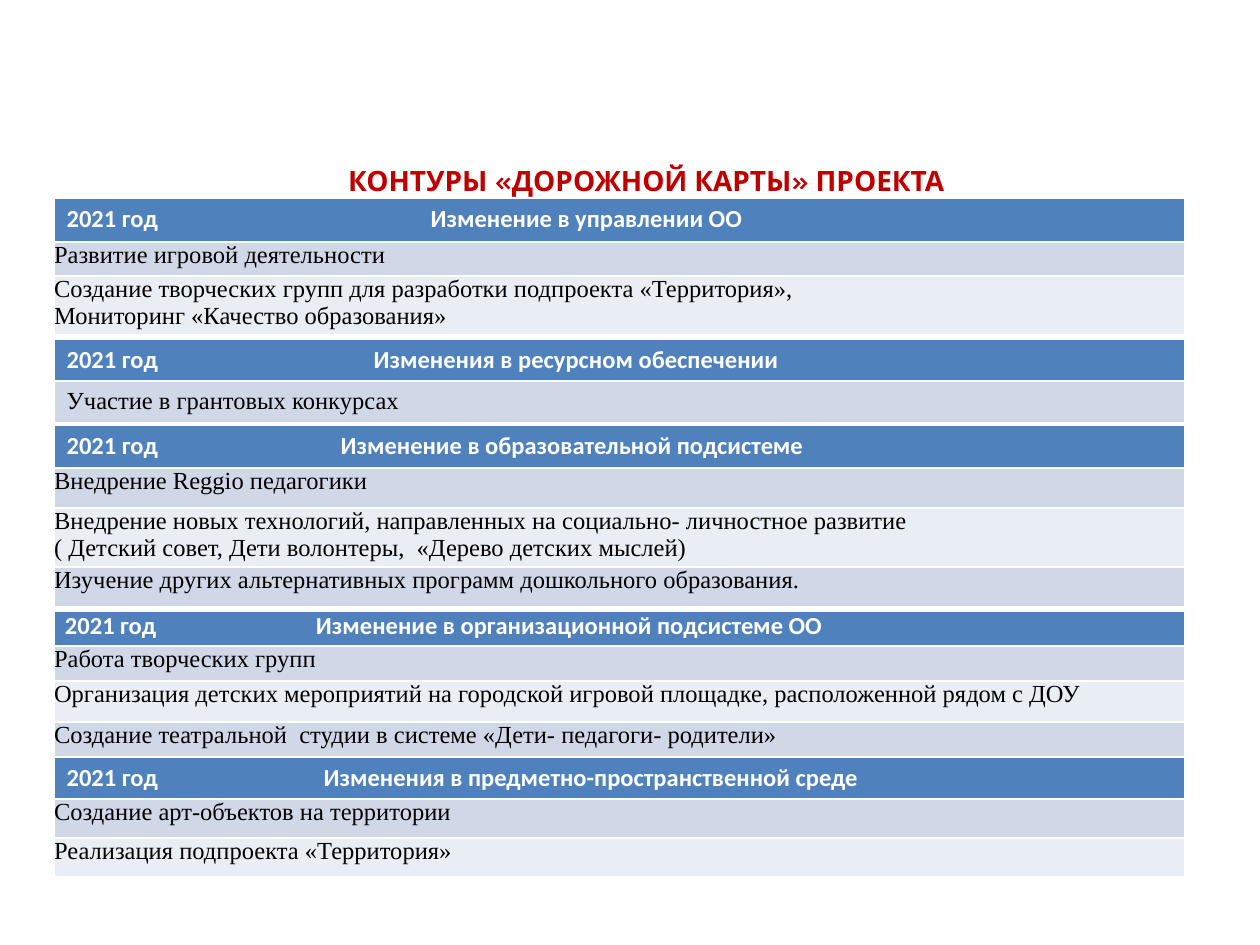
from dataclasses import dataclass

from lxml.etree import SubElement
from pptx import Presentation
from pptx.dml.color import RGBColor
from pptx.enum.text import MSO_AUTO_SIZE, PP_ALIGN
from pptx.oxml.ns import qn
from pptx.util import Pt

SCALE = 914400 / 126
LEFT, WIDTH = 54, 1131
INSET = 13
YEAR = "2021 год"

RED = RGBColor(0xC0, 0x00, 0x00)
BLUE = RGBColor(0x4F, 0x81, 0xBD)
DARK = RGBColor(0xD0, 0xD8, 0xE8)
LIGHT = RGBColor(0xE9, 0xED, 0xF4)
WHITE = RGBColor(0xFF, 0xFF, 0xFF)
BLACK = RGBColor(0x00, 0x00, 0x00)


@dataclass
class Row:
    text: str
    height: int
    inset: bool = False


@dataclass
class Block:
    top: int
    title: str
    tab: int
    height: int
    rows: list[Row]
    tight: bool = False


BLOCKS = [
    Block(198, "Изменение в управлении ОО", 364, 44, [
        Row("Развитие игровой деятельности", 34),
        Row("Создание творческих групп для разработки подпроекта «Территория»,\n"
            "Мониторинг «Качество образования»", 58),
    ]),
    Block(339, "Изменения в ресурсном обеспечении", 307, 42, [
        Row("Участие в грантовых конкурсах", 42, inset=True),
    ]),
    Block(425, "Изменение в образовательной подсистеме", 274, 43, [
        Row("Внедрение Reggio педагогики", 40),
        Row("Внедрение новых технологий, направленных на социально- личностное развитие\n"
            "( Детский совет, Дети волонтеры,  «Дерево детских мыслей)", 59),
        Row("Изучение других альтернативных программ дошкольного образования.", 40),
    ]),
    Block(611, "Изменение в организационной подсистеме ОО", 251, 35, [
        Row("Работа творческих групп", 35),
        Row("Организация детских мероприятий на городской игровой площадке, "
            "расположенной рядом с ДОУ", 41),
        Row("Создание театральной  студии в системе «Дети- педагоги- родители»", 35),
    ], tight=True),
    Block(757, "Изменения в предметно-пространственной среде", 257, 42, [
        Row("Создание арт-объектов на территории", 39),
        Row("Реализация подпроекта «Территория»", 39),
    ]),
]


def px(num: int) -> int:
    return round(num * SCALE)


def style(par, face: str, size: int, color: RGBColor, bold: bool) -> None:
    font = par.font
    font.name, font.size, font.bold = face, Pt(size), bold
    font.color.rgb = color


def paint(cell, color: RGBColor) -> None:
    cell.fill.solid()
    cell.fill.fore_color.rgb = color


def trim(cell, left: int = 0) -> None:
    """Remove the cell's insets, apart from the left one if given."""
    cell.margin_top = cell.margin_right = cell.margin_bottom = 0
    cell.margin_left = px(left)


def add_tab(par, pos: int) -> None:
    tabs = SubElement(par._p.get_or_add_pPr(), qn("a:tabLst"))
    SubElement(tabs, qn("a:tab"), pos=str(px(pos)), algn="l")


def draw_head(cell, block: Block) -> None:
    paint(cell, BLUE)
    if block.tight:
        trim(cell, INSET - 2)
    par = cell.text_frame.paragraphs[0]
    par.add_run().text = f"{YEAR}\t{block.title}"
    add_tab(par, block.tab)
    style(par, "Calibri", 14, WHITE, True)


def draw_row(cell, row: Row, color: RGBColor) -> None:
    paint(cell, color)
    if not row.inset:
        trim(cell)
    cell.text = row.text
    for par in cell.text_frame.paragraphs:
        style(par, "Times New Roman", 14, BLACK, False)


def draw_block(slide, block: Block) -> None:
    sizes = [block.height] + [row.height for row in block.rows]
    table = slide.shapes.add_table(
        len(sizes), 1, px(LEFT), px(block.top), px(WIDTH), px(sum(sizes))).table
    for line, size in zip(table.rows, sizes):
        line.height = px(size)
    draw_head(table.cell(0, 0), block)
    for num, row in enumerate(block.rows):
        draw_row(table.cell(num + 1, 0), row, LIGHT if num % 2 else DARK)


def draw_title(slide) -> None:
    box = slide.shapes.add_textbox(px(130), px(161), px(1033), px(43))
    frame = box.text_frame
    frame.word_wrap = True
    frame.auto_size = MSO_AUTO_SIZE.SHAPE_TO_FIT_TEXT
    par = frame.paragraphs[0]
    par.text = "КОНТУРЫ «ДОРОЖНОЙ КАРТЫ» ПРОЕКТА"
    par.alignment = PP_ALIGN.CENTER
    par.line_spacing = 0.9
    style(par, "Karla", 16, RED, True)


def main() -> None:
    deck = Presentation()
    deck.slide_width, deck.slide_height = px(1260), px(945)
    slide = deck.slides.add_slide(deck.slide_layouts[6])
    draw_title(slide)
    for block in BLOCKS:
        draw_block(slide, block)
    deck.save("out.pptx")


if __name__ == "__main__":
    main()
